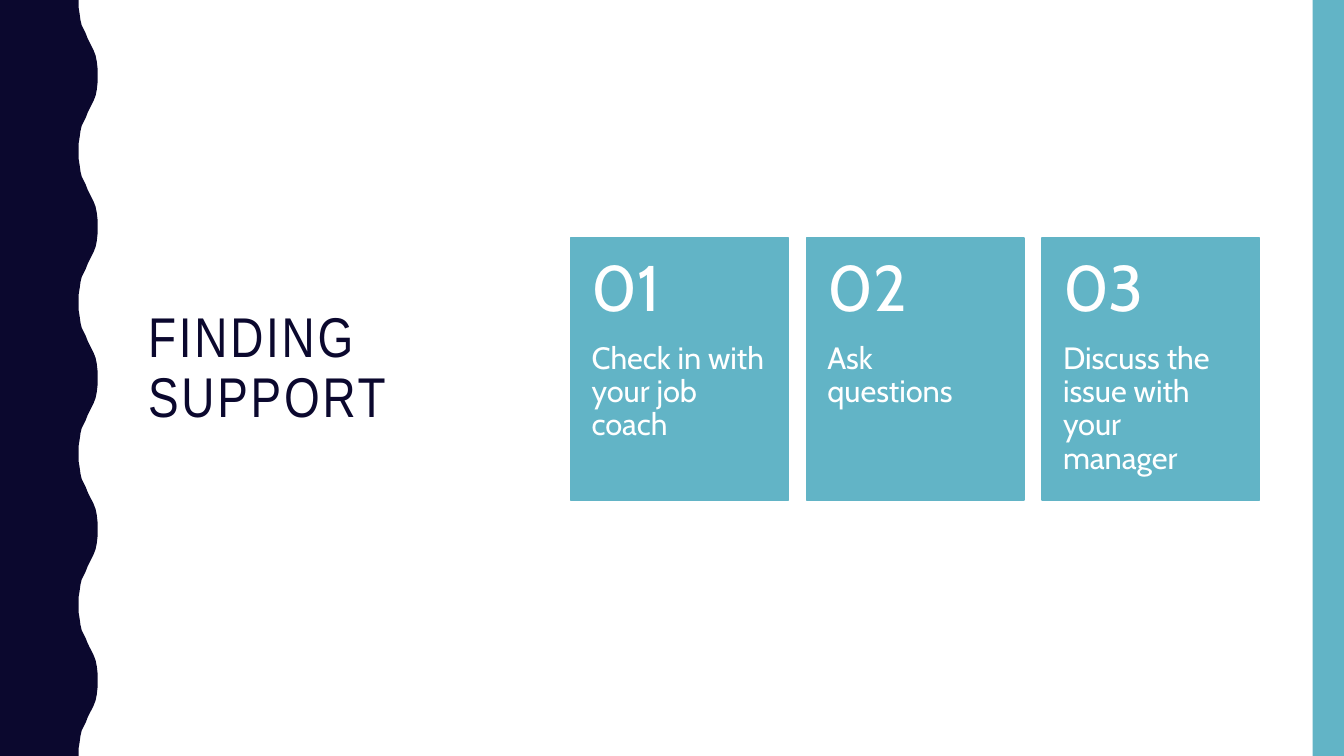
from dataclasses import dataclass

from pptx import Presentation
from pptx.dml.color import RGBColor
from pptx.enum.shapes import MSO_SHAPE
from pptx.enum.text import MSO_ANCHOR, MSO_AUTO_SIZE, PP_ALIGN
from pptx.util import Cm, Pt


@dataclass(frozen=True)
class Theme:
    navy: RGBColor = RGBColor.from_string("0B082E")
    teal: RGBColor = RGBColor.from_string("62B4C6")
    white: RGBColor = RGBColor.from_string("FFFFFF")
    title_font: str = "Arial Narrow"
    body_font: str = "Cabin"
    title_size: Pt = Pt(40)
    number_size: Pt = Pt(46)
    step_size: Pt = Pt(22)
    line_spacing: float = 0.9


THEME = Theme()
SLIDE_WIDTH, SLIDE_HEIGHT = Cm(33.87), Cm(19.05)

STEPS = [
    "Check in with your job coach",
    "Ask questions",
    "Discuss the issue with your manager",
]
CARD_LEFT, CARD_TOP, CARD_PITCH = 14.38, 6, 5.94
CARD_WIDTH, CARD_HEIGHT, NUMBER_HEIGHT = 5.49, 6.6, 2.64
CARD_INSET = 0.53

# Half a wave from trough to crest, as (x, y) in cm
WAVE_COUNT, WAVE_LENGTH = 5, 3.81
HALF_WAVE = [
    (1.98, 0), (1.98, 0.18), (2.01, 0.36), (2.03, 0.51), (2.06, 0.64),
    (2.11, 0.74), (2.16, 0.84), (2.21, 0.97), (2.26, 1.07), (2.31, 1.17),
    (2.36, 1.27), (2.41, 1.4), (2.44, 1.55), (2.46, 1.73), (2.46, 1.9),
]


def paint(shape, color):
    shape.shadow.inherit = False
    shape.fill.solid()
    shape.fill.fore_color.rgb = color
    shape.line.fill.background()


def format_text(frame, text, font_name, size, color, anchor):
    frame.word_wrap = True
    frame.auto_size = MSO_AUTO_SIZE.NONE
    frame.vertical_anchor = anchor
    paragraph = frame.paragraphs[0]
    paragraph.text = text
    paragraph.alignment = PP_ALIGN.LEFT
    paragraph.line_spacing = THEME.line_spacing
    paragraph.font.name = font_name
    paragraph.font.size = size
    paragraph.font.color.rgb = color
    return paragraph


def add_wavy_edge(slide):
    full_wave = HALF_WAVE + [(x, WAVE_LENGTH - y) for x, y in HALF_WAVE[::-1]]
    outline = [
        (Cm(x), Cm(y + wave * WAVE_LENGTH))
        for wave in range(WAVE_COUNT)
        for x, y in full_wave
    ]
    builder = slide.shapes.build_freeform(0, 0)
    builder.add_line_segments(outline + [(0, SLIDE_HEIGHT)], close=True)
    paint(builder.convert_to_shape(), THEME.navy)


def add_side_bar(slide):
    width = Cm(0.79)
    bar = slide.shapes.add_shape(
        MSO_SHAPE.RECTANGLE, SLIDE_WIDTH - width, 0, width, SLIDE_HEIGHT)
    paint(bar, THEME.teal)


def set_title(slide, text):
    title = slide.shapes.title
    title.left, title.top = Cm(3.48), Cm(1.8)
    title.width, title.height = Cm(9.4), Cm(15.01)
    paragraph = format_text(title.text_frame, text, THEME.title_font,
                            THEME.title_size, THEME.navy, MSO_ANCHOR.MIDDLE)
    # Letter spacing of 2 pt
    for run in paragraph.runs:
        run._r.get_or_add_rPr().set("spc", "200")


def add_card_text(cards, text, left, top, height, margins, size, anchor):
    box = cards.shapes.add_textbox(
        Cm(left), Cm(top), Cm(CARD_WIDTH), Cm(height))
    frame = box.text_frame
    frame.margin_left = frame.margin_right = Cm(CARD_INSET)
    frame.margin_top, frame.margin_bottom = map(Cm, margins)
    format_text(frame, text, THEME.body_font, size, THEME.white, anchor)


def add_card(cards, index, step):
    left = CARD_LEFT + index * CARD_PITCH
    panel = cards.shapes.add_shape(
        MSO_SHAPE.RECTANGLE,
        Cm(left), Cm(CARD_TOP), Cm(CARD_WIDTH), Cm(CARD_HEIGHT))
    paint(panel, THEME.teal)
    panel.line.color.rgb = THEME.teal
    panel.line.width = Pt(1)
    add_card_text(cards, step, left, CARD_TOP + NUMBER_HEIGHT,
                  CARD_HEIGHT - NUMBER_HEIGHT, (0, 0.91),
                  THEME.step_size, MSO_ANCHOR.TOP)
    add_card_text(cards, f"{index + 1:02}", left, CARD_TOP, NUMBER_HEIGHT,
                  (0.46, 0.46), THEME.number_size, MSO_ANCHOR.MIDDLE)


def main():
    presentation = Presentation()
    presentation.slide_width = SLIDE_WIDTH
    presentation.slide_height = SLIDE_HEIGHT
    slide = presentation.slides.add_slide(presentation.slide_layouts[5])

    # Decoration
    add_wavy_edge(slide)
    add_side_bar(slide)

    # Content
    set_title(slide, "FINDING SUPPORT")
    cards = slide.shapes.add_group_shape()
    for index, step in enumerate(STEPS):
        add_card(cards, index, step)

    presentation.save("out.pptx")


if __name__ == "__main__":
    main()
